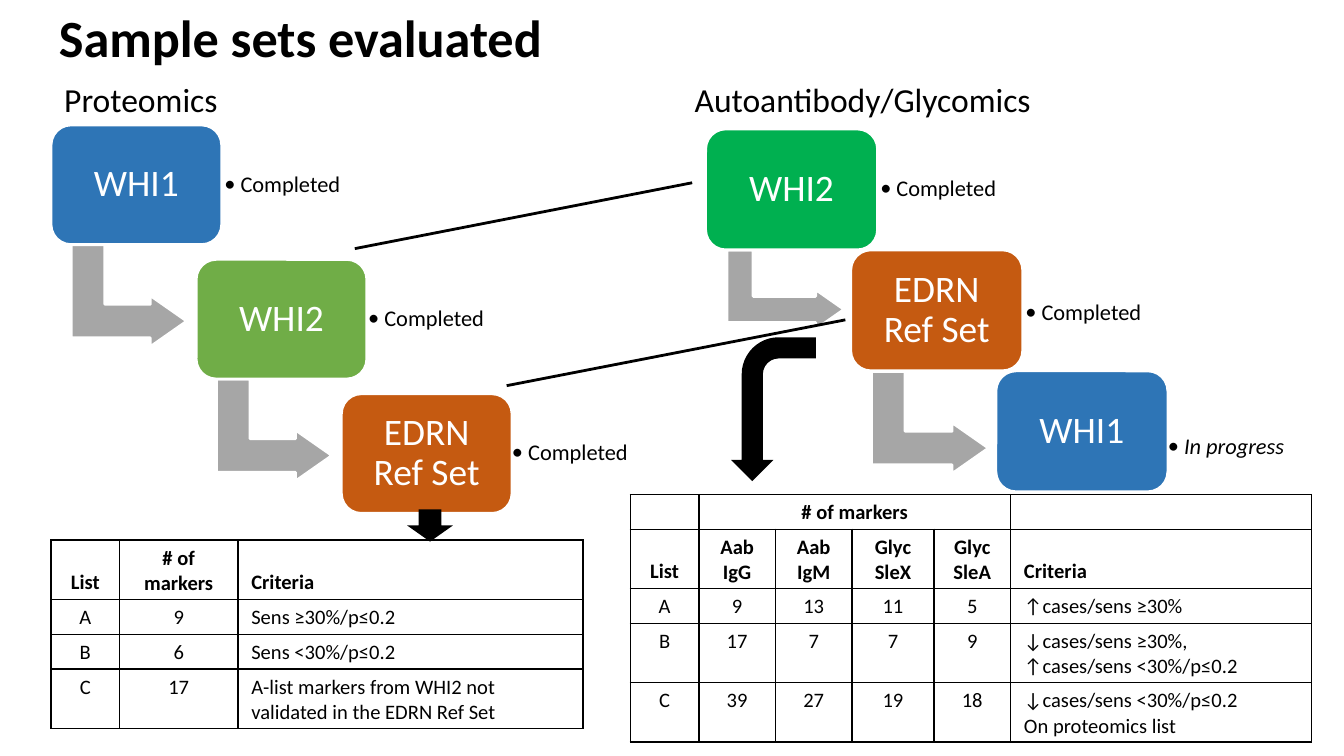
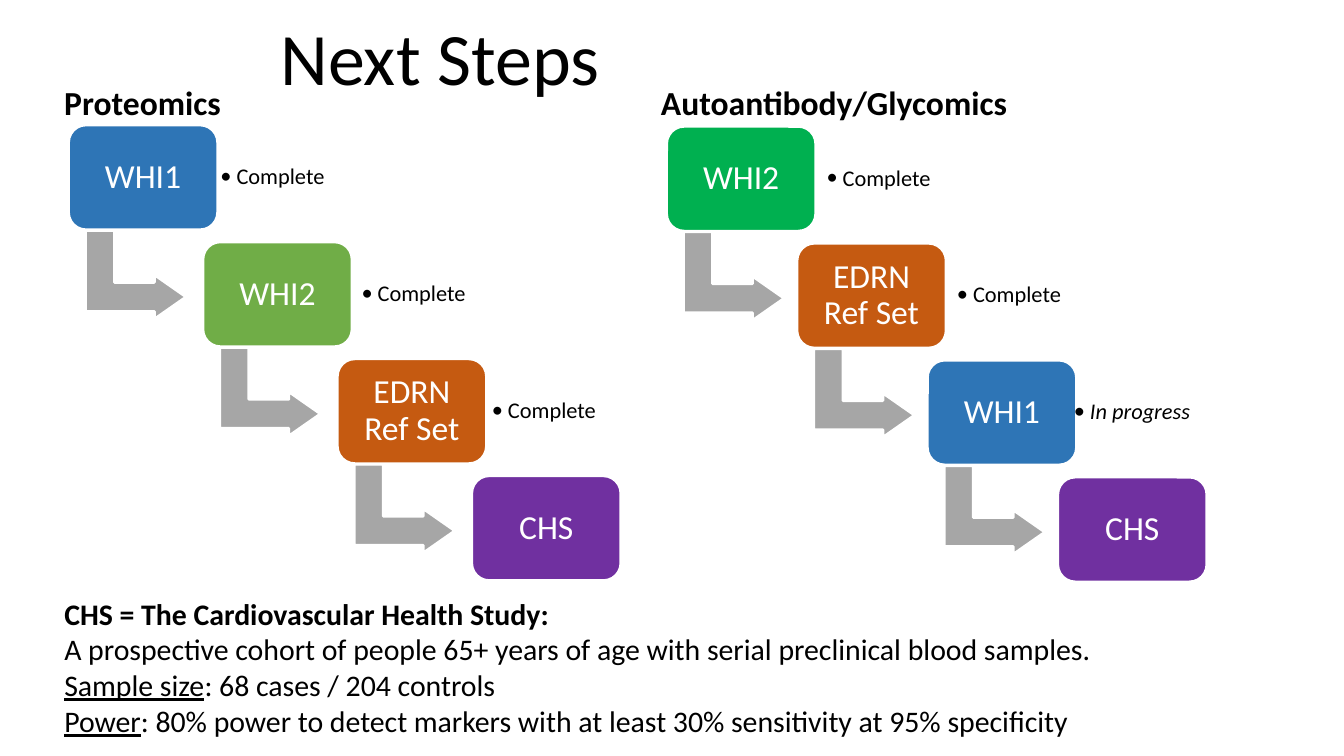
from pptx import Presentation
from pptx.dml.color import RGBColor as Rgb
from pptx.enum.shapes import MSO_CONNECTOR as Conn, MSO_SHAPE as Kind
from pptx.enum.text import MSO_ANCHOR as Anchor, PP_ALIGN as Align
from pptx.oxml.ns import qn
from pptx.util import Pt
from lxml.etree import SubElement as Sub

PX = 9144
FONT = "Calibri"
HUES = {
    "black": "000000", "white": "FFFFFF", "grey": "A6A6A6",
    "blue": "2E75B6", "olive": "70AD47", "green": "00B050",
    "rust": "C55A11", "purple": "7030A0",
}


class Deck:
    """Hold the style and the current slide, and draw each kind of element."""

    def __init__(self, wide):
        self.prs = Presentation()
        self.prs.slide_width = wide * PX
        self.prs.slide_height = wide * PX * 9 // 16

    def page(self):
        self.slide = self.prs.slides.add_slide(self.prs.slide_layouts[6])

    def hue(self, name):
        return Rgb.from_string(HUES[name])

    def style(self, run, size, hue="black", marks=""):
        font = run.font
        font.name, font.size = FONT, Pt(size)
        font.color.rgb = self.hue(hue)
        font.bold, font.italic = "b" in marks, "i" in marks
        font.underline = "u" in marks

    def pad(self, frame, side, top, base):
        frame.margin_left = frame.margin_right = side * PX
        frame.margin_top, frame.margin_bottom = top * PX, base * PX

    def text(self, box, lines, size):
        """Add a text box; each line is a list of (text, marks) runs."""
        frame = self.slide.shapes.add_textbox(*[v * PX for v in box]).text_frame
        frame.word_wrap = True
        for i, line in enumerate(lines):
            para = frame.add_paragraph() if i else frame.paragraphs[0]
            for words, marks in line:
                run = para.add_run()
                run.text = words
                self.style(run, size, marks=marks)
        return frame

    def title(self, box, words, size, marks=""):
        frame = self.text(box, [[(words, marks)]], size)
        frame.vertical_anchor = Anchor.MIDDLE
        frame.paragraphs[0].line_spacing = 0.9

    def heads(self, top, stop, marks=""):
        words = "Proteomics\tAutoantibody/Glycomics"
        frame = self.text((38, top, 867, 40), [[(words, marks)]], 18)
        props = frame.paragraphs[0]._p.get_or_add_pPr()
        tabs = Sub(props, qn("a:tabLst"))
        Sub(tabs, qn("a:tab"), pos=str(stop * PX), algn="l")

    def shape(self, kind, box, hue, edge=None, turn=0, adj=()):
        item = self.slide.shapes.add_shape(kind, *[v * PX for v in box])
        item.shadow.inherit = False
        item.rotation = turn
        for i, value in enumerate(adj):
            item.adjustments[i] = value
        item.fill.solid()
        item.fill.fore_color.rgb = self.hue(hue)
        if edge:
            item.line.color.rgb = self.hue(edge)
            item.line.width = Pt(1.5)
        else:
            item.line.fill.background()
        return item

    def elbow(self, x, y, w, h):
        """Draw an arrow down and right that fills the given area."""
        shift = (w - h) // 2
        box = (x + shift, y - shift, h, w)
        self.shape(Kind.BENT_UP_ARROW, box, "grey", "white", 90,
                   (0.328, 0.25, 0.358))

    def block(self, box, words, hue, size):
        item = self.shape(Kind.ROUNDED_RECTANGLE, box, hue, "white",
                          adj=(0.167,))
        frame = item.text_frame
        frame.word_wrap = True
        frame.vertical_anchor = Anchor.MIDDLE
        self.pad(frame, 8, 8, 8)
        frame.text = words
        para = frame.paragraphs[0]
        para.alignment, para.line_spacing = Align.CENTER, 0.9
        self.style(para.runs[0], size, "white")

    def note(self, box, words, marks):
        frame = self.text(box, [[(words, marks)]], 12)
        frame.vertical_anchor = Anchor.MIDDLE
        self.pad(frame, 5, 5, 5)
        para = frame.paragraphs[0]
        para.level, para.line_spacing = 1, 0.9
        props = para._p.get_or_add_pPr()
        props.set("marL", str(12 * PX))
        props.set("indent", str(-12 * PX))
        Sub(props, qn("a:buFont"), typeface=FONT)
        Sub(props, qn("a:buChar"), char="•")

    def stairs(self, start, size, gap, bend, point, steps):
        """Draw steps of (name, hue, note, marks, note shift, arrow height)."""
        (x, y), (w, h) = start, size
        for i, (name, hue, memo, marks, (dx, dy), drop) in enumerate(steps):
            if i < len(steps) - 1:
                self.elbow(x + w // 8, y + h, bend[0], drop or bend[1])
            self.block((x, y, w, h), name, hue, point)
            if memo:
                tall = h * 4 // 5
                area = (x + w + dx, y + (h - tall) // 2 + dy, 104, tall)
                self.note(area, memo, marks)
            x, y = x + gap[0], y + gap[1]

    def line(self, x1, y1, x2, y2):
        ends = [v * PX for v in (x1, y1, x2, y2)]
        item = self.slide.shapes.add_connector(Conn.STRAIGHT, *ends)
        item.line.color.rgb = self.hue("black")
        item.line.width = Pt(1.5)
        Sub(item._element.spPr, qn("a:effectLst"))

    def border(self, cell):
        props = cell._tc.get_or_add_tcPr()
        for side in "LRTB":
            edge = Sub(props, qn("a:ln" + side), w=str(Pt(1)))
            fill = Sub(edge, qn("a:solidFill"))
            Sub(fill, qn("a:srgbClr"), val=HUES["black"])
        cell.fill.background()

    def table(self, x, y, cols, highs, rows, heads, span=None):
        """Add a table whose last column is left aligned."""
        area = (x, y, sum(cols), sum(highs))
        grid = self.slide.shapes.add_table(
            len(rows), len(cols), *[v * PX for v in area]).table
        grid.first_row = grid.horz_banding = False
        for col, wide in zip(grid.columns, cols):
            col.width = wide * PX
        for r, (row, high) in enumerate(zip(rows, highs)):
            grid.rows[r].height = high * PX
            for c, words in enumerate(row):
                cell = grid.cell(r, c)
                self.border(cell)
                self.pad(cell, 10, 4, 3)
                cell.text = words
                cell.vertical_anchor = Anchor.BOTTOM if r < heads else Anchor.TOP
                mid = c < len(cols) - 1
                for para in cell.text_frame.paragraphs:
                    para.alignment = Align.CENTER if mid else Align.LEFT
                    for run in para.runs:
                        self.style(run, 11, marks="b" if r < heads else "")
                    if not words:
                        Sub(para._p, qn("a:endParaRPr"), sz="1100")
        if span:
            (r1, c1), (r2, c2) = span
            grid.cell(r1, c1).merge(grid.cell(r2, c2))


def samples(deck):
    deck.page()
    deck.title((34, 2, 862, 57), "Sample sets evaluated", 28, "b")
    deck.heads(54, 469)
    done = "Completed"
    deck.stairs((38, 93), (127, 89), (108, 100), (86, 76), 20, [
        ("WHI1", "blue", done, "", (-3, 0), 0),
        ("WHI2", "olive", done, "", (-4, 0), 0),
        ("EDRN Ref Set", "rust", done, "", (-5, 0), 0),
    ])
    deck.stairs((525, 96), (128, 90), (108, 90), (87, 76), 20, [
        ("WHI2", "green", done, "", (-3, 0), 59),
        ("EDRN Ref Set", "rust", done, "", (-3, 2), 0),
        ("WHI1", "blue", "In progress", "i", (-5, 12), 0),
    ])
    deck.table(38, 402, (51, 88, 257), (44, 26, 26, 44), [
        ("List", "# of markers", "Criteria"),
        ("A", "9", "Sens ≥30%/p≤0.2"),
        ("B", "6", "Sens <30%/p≤0.2"),
        ("C", "17",
         "A-list markers from WHI2 not validated in the EDRN Ref Set"),
    ], 1)
    deck.table(469, 368, (51, 57, 57, 61, 57, 224), (26, 44, 26, 44, 44), [
        ("", "# of markers", "", "", "", ""),
        ("List", "Aab\vIgG", "Aab\vIgM", "Glyc\vSleX", "Glyc\vSleA",
         "Criteria"),
        ("A", "9", "13", "11", "5", "↑cases/sens ≥30%"),
        ("B", "17", "7", "7", "9",
         "↓cases/sens ≥30%,\n↑cases/sens <30%/p≤0.2"),
        ("C", "39", "27", "19", "18",
         "↓cases/sens <30%/p≤0.2\nOn proteomics list"),
    ], 2, ((0, 1), (0, 4)))
    deck.shape(Kind.DOWN_ARROW, (303, 379, 34, 24), "black")
    hook = deck.shape(Kind.BENT_ARROW, (522, 273, 107, 63), "black", turn=90)
    hook._element.spPr.find(qn("a:xfrm")).set("flipV", "1")
    deck.line(377, 287, 629, 238)
    deck.line(264, 185, 515, 136)


def plans(deck):
    deck.page()
    deck.title((199, 17, 276, 57), "Next Steps", 39.6)
    deck.heads(56, 444, "b")
    deck.text((38, 438, 899, 118), [
        [("CHS = The Cardiovascular Health Study:", "b")],
        [("A prospective cohort of people 65+ years of age with serial "
          "preclinical blood samples.", "")],
        [("Sample size", "u"), (": 68 cases / 204 controls", "")],
        [("Power", "u"), (": 80% power to detect markers with at least 30% "
                          "sensitivity at 95% specificity", "")],
    ], 16)
    done = "Complete"
    last = ("CHS", "purple", "", "", (0, 0), 0)
    size, bend = (111, 78), (75, 66)
    deck.stairs((51, 93), size, (100, 87), bend, 18, [
        ("WHI1", "blue", done, "", (-3, 0), 0),
        ("WHI2", "olive", done, "", (2, 0), 0),
        ("EDRN Ref Set", "rust", done, "", (-1, 0), 0),
        last,
    ])
    deck.stairs((496, 94), size, (97, 87), bend, 18, [
        ("WHI2", "green", done, "", (3, 0), 0),
        ("EDRN Ref Set", "rust", done, "", (3, 0), 0),
        ("WHI1", "blue", "In progress", "i", (-7, 0), 0),
        last,
    ])


def main():
    deck = Deck(1000)
    samples(deck)
    plans(deck)
    deck.prs.save("out.pptx")


if __name__ == "__main__":
    main()
